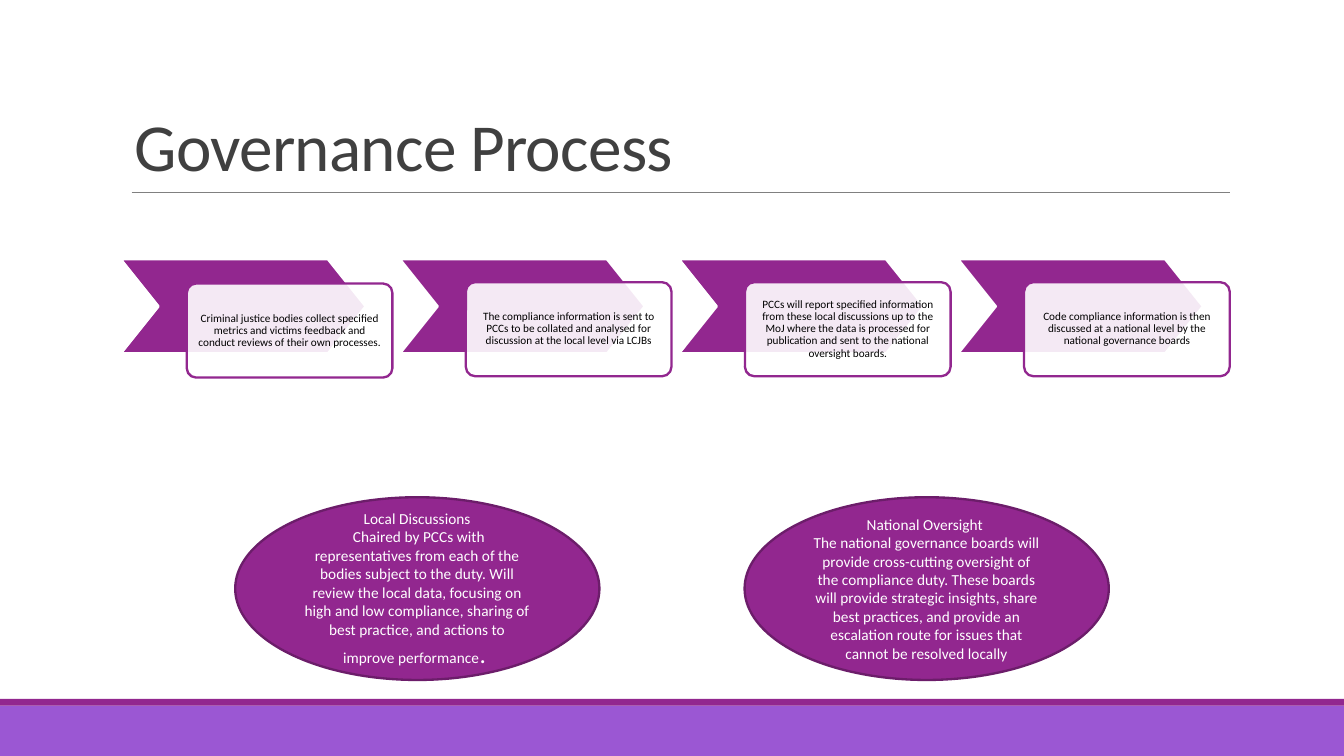
from lxml.etree import SubElement
from pptx import Presentation
from pptx.dml.color import RGBColor
from pptx.enum.shapes import MSO_CONNECTOR, MSO_SHAPE as Shape
from pptx.enum.text import MSO_ANCHOR as Anchor, MSO_AUTO_SIZE, PP_ALIGN as Align
from pptx.oxml.ns import qn
from pptx.util import Inches, Pt

COLORS = {
    "purple": "92278F",
    "dark purple": "6C1D6A",
    "violet": "9B57D3",
    "white": "FFFFFF",
    "black": "000000",
    "title": "404040",
    "rule": "808080",
}
FONT = "Calibri"

# A 16:9 slide
presentation = Presentation()
presentation.slide_width = Inches(10)
presentation.slide_height = Inches(10 * 9 / 16)
slide = presentation.slides.add_slide(presentation.slide_layouts[5])


def add_box(kind, left, top, width, height, fill, line=None):
    shape = slide.shapes.add_shape(
        kind, Inches(left), Inches(top), Inches(width), Inches(height))
    shape.shadow.inherit = False
    shape.fill.solid()
    shape.fill.fore_color.rgb = RGBColor.from_string(COLORS[fill])
    if line:
        shape.line.color.rgb = RGBColor.from_string(COLORS[line])
        shape.line.width = Pt(1.25)
    else:
        shape.line.fill.background()
    return shape


def add_run(paragraph, text, size, color):
    run = paragraph.add_run()
    run.text = text
    run.font.name = FONT
    run.font.size = Pt(size)
    run.font.color.rgb = RGBColor.from_string(COLORS[color])
    return run


# Footer bands
add_box(Shape.RECTANGLE, 0, 5.25, 10, 0.38, "violet")
add_box(Shape.RECTANGLE, 0, 5.2, 10, 0.05, "purple")

# Title and the rule below it
title = slide.shapes.title
title.left, title.top = Inches(0.9), Inches(0.24)
title.width, title.height = Inches(8.25), Inches(1.19)
frame = title.text_frame
frame.auto_size = MSO_AUTO_SIZE.NONE
frame.vertical_anchor = Anchor.BOTTOM
paragraph = frame.paragraphs[0]
paragraph.alignment = Align.LEFT
paragraph.line_spacing = 0.85
run = add_run(paragraph, "Governance Process", 36, "title")
run.font._element.set("spc", "-40")

rule = slide.shapes.add_connector(
    MSO_CONNECTOR.STRAIGHT, Inches(0.98), Inches(1.43), Inches(9.15), Inches(1.43))
rule.line.color.rgb = RGBColor.from_string(COLORS["rule"])
rule.line.width = Pt(0.5)
SubElement(rule._element.spPr, qn("a:effectLst"))

# Process steps: a chevron with a translucent card over its lower right
steps = [
    "Criminal justice bodies collect specified metrics and victims feedback "
    "and conduct reviews of their own processes.",
    "The compliance information is sent to PCCs to be collated and analysed "
    "for discussion at the local level via LCJBs",
    "PCCs will report specified information from these local discussions up to "
    "the MoJ where the data is processed for publication and sent to the "
    "national oversight boards.",
    "Code compliance information is then discussed at a national level by the "
    "national governance boards",
]
STEP_LEFT, STEP_PITCH = 0.9, 6.23 / 3
for column, text in enumerate(steps):
    left = STEP_LEFT + column * STEP_PITCH
    chevron = add_box(Shape.CHEVRON, left, 1.93, 1.82, 0.7, "purple", "white")
    chevron.adjustments[0] = 0.4

    card_top = 2.11 if column == 0 else 2.1
    card = add_box(Shape.ROUNDED_RECTANGLE, left + 0.49, card_top, 1.53, 0.7,
                   "white", "purple")
    card.adjustments[0] = 0.1
    fill_color = card._element.spPr.find(qn("a:solidFill"))[0]
    SubElement(fill_color, qn("a:alpha")).set("val", "90000")

    frame = card.text_frame
    frame.word_wrap = True
    frame.vertical_anchor = Anchor.MIDDLE
    frame.margin_left = frame.margin_right = Inches(0.05)
    frame.margin_top = frame.margin_bottom = Inches(0.05)
    paragraph = frame.paragraphs[0]
    paragraph.alignment = Align.CENTER
    paragraph.line_spacing = 0.9
    add_run(paragraph, text, 6, "black")

# Governance levels: each paragraph is a list of (text, size) runs
levels = [
    [[("Local Discussions", 8.25)],
     [(" Chaired by PCCs with representatives from each of the bodies subject to "
       "the duty. Will review the local data, focusing on high and low "
       "compliance, sharing of best practice, and actions to improve "
       "performance", 8.25), (". ", 13.5)]],
    [[("National Oversight ", 8.25)],
     [("The national governance boards will provide cross-cutting oversight of "
       "the compliance duty. These boards will provide strategic insights, "
       "share best practices, and provide an escalation route for issues that "
       "cannot be resolved locally", 8.25)]],
]
for column, paragraphs in enumerate(levels):
    ellipse = add_box(Shape.OVAL, 1.75 + column * 3.79, 3.7, 2.71, 1.36,
                      "purple", "dark purple")
    frame = ellipse.text_frame
    frame.word_wrap = True
    frame.vertical_anchor = Anchor.MIDDLE
    for index, runs in enumerate(paragraphs):
        paragraph = frame.add_paragraph() if index else frame.paragraphs[0]
        paragraph.alignment = Align.CENTER
        for text, size in runs:
            add_run(paragraph, text, size, "white")

presentation.save("out.pptx")
